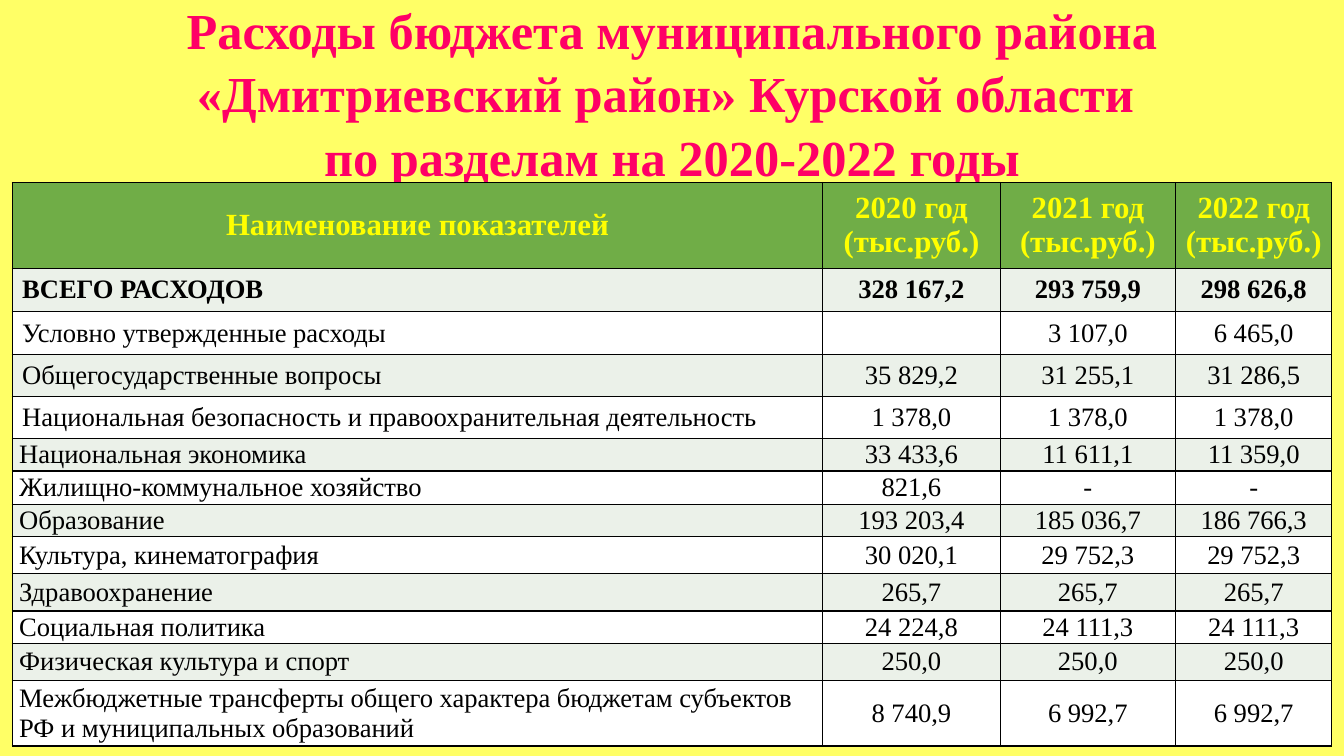
import pptx
import pptx.dml.color
import pptx.enum.text
import pptx.oxml
import pptx.oxml.ns
import pptx.util
from pptx.util import Inches

COLOURS = {
    "page": "FFFF66", "title": "FF0066", "header": "70AD47", "header_text": "FFFF00",
    "band": "EBF1E9", "plain": "FFFFFF", "text": "000000", "border": "000000",
}
FONT = "Times New Roman"
CENTER = pptx.enum.text.PP_ALIGN.CENTER
LEFT = pptx.enum.text.PP_ALIGN.LEFT
MIDDLE = pptx.enum.text.MSO_ANCHOR.MIDDLE

TITLE = ("Расходы бюджета муниципального района «Дмитриевский район» Курской области \n"
         "по разделам на 2020-2022 годы")
COLUMN_WIDTHS = [8.04, 1.76, 1.74, 1.55]
ROW_HEIGHTS = [0.85, 0.43, 0.43, 0.39, 0.36, 0.32, 0.33, 0.32, 0.37, 0.37, 0.32, 0.37, 0.65]
TOTAL_ROW = 1
LAST_ROOMY_ROW = 4  # names down to this row keep the default cell margins
BUDGET = [
    ["Наименование показателей", "2020 год (тыс.руб.)", "2021 год (тыс.руб.)",
     "2022 год (тыс.руб.)"],
    ["ВСЕГО РАСХОДОВ", "328 167,2", "293 759,9", "298 626,8"],
    ["Условно утвержденные расходы", "", "3 107,0", "6 465,0"],
    ["Общегосударственные вопросы", "35 829,2", "31 255,1", "31 286,5"],
    ["Национальная безопасность и правоохранительная деятельность",
     "1 378,0", "1 378,0", "1 378,0"],
    ["Национальная экономика", "33 433,6", "11 611,1", "11 359,0"],
    ["Жилищно-коммунальное хозяйство", "821,6", "-", "-"],
    ["Образование", "193 203,4", "185 036,7", "186 766,3"],
    ["Культура, кинематография", "30 020,1", "29 752,3", "29 752,3"],
    ["Здравоохранение", "265,7", "265,7", "265,7"],
    ["Социальная политика", "24 224,8", "24 111,3", "24 111,3"],
    ["Физическая культура и спорт", "250,0", "250,0", "250,0"],
    ["Межбюджетные трансферты общего характера бюджетам субъектов РФ "
     "и муниципальных образований", "8 740,9", "6 992,7", "6 992,7"],
]


def rgb(name):
    return pptx.dml.color.RGBColor.from_string(COLOURS[name])


def write_text(frame, text, size=19, colour="text", bold=False, align=CENTER, spacing=None):
    """Fill the first paragraph; a newline in the text becomes a line break."""
    para = frame.paragraphs[0]
    para.alignment = align
    para.line_spacing = spacing
    para.font.size = pptx.util.Pt(size)
    for number, line in enumerate(text.split("\n")):
        if number:
            para.add_line_break()
        if line:
            span = para.add_run()
            span.text = line
            span.font.name = FONT
            span.font.size = pptx.util.Pt(size)
            span.font.bold = bold
            span.font.color.rgb = rgb(colour)


def add_title(page):
    box = page.shapes.add_textbox(0, 0, Inches(13.33), Inches(1.81))
    box.text_frame.word_wrap = True
    box.text_frame.vertical_anchor = MIDDLE
    write_text(box.text_frame, TITLE, size=36, colour="title", bold=True, spacing=1.05)


def add_borders(cell):
    properties = cell._tc.get_or_add_tcPr()
    for side in ("lnL", "lnR", "lnT", "lnB"):
        properties.append(pptx.oxml.parse_xml(
            f'<a:{side} {pptx.oxml.ns.nsdecls("a")} w="{pptx.util.Pt(1)}">'
            f'<a:solidFill><a:srgbClr val="{COLOURS["border"]}"/></a:solidFill></a:{side}>'))


def format_cell(cell, text, row, column):
    add_borders(cell)
    cell.vertical_anchor = MIDDLE
    cell.fill.solid()
    if row == 0:
        cell.fill.fore_color.rgb = rgb("header")
        write_text(cell.text_frame, text, size=22, colour="header_text", bold=True)
        return
    cell.fill.fore_color.rgb = rgb("band" if row % 2 else "plain")
    if column > 0 or row > LAST_ROOMY_ROW:
        cell.margin_left = cell.margin_right = Inches(0.07)
        cell.margin_top = cell.margin_bottom = 0
    write_text(cell.text_frame, text, bold=row == TOTAL_ROW,
               align=CENTER if column else LEFT)


def add_budget_table(page):
    table = page.shapes.add_table(
        len(BUDGET), len(COLUMN_WIDTHS), Inches(0.12), Inches(1.81),
        Inches(sum(COLUMN_WIDTHS)), Inches(sum(ROW_HEIGHTS))).table
    for column, width in zip(table.columns, COLUMN_WIDTHS):
        column.width = Inches(width)
    for row, height in zip(table.rows, ROW_HEIGHTS):
        row.height = Inches(height)
    for row, texts in enumerate(BUDGET):
        for column, text in enumerate(texts):
            format_cell(table.cell(row, column), text, row, column)


def main():
    deck = pptx.Presentation()
    deck.slide_width = Inches(13.33)
    deck.slide_height = Inches(7.5)
    page = deck.slides.add_slide(deck.slide_layouts[6])
    page.background.fill.solid()
    page.background.fill.fore_color.rgb = rgb("page")
    add_title(page)
    add_budget_table(page)
    deck.save("out.pptx")


if __name__ == "__main__":
    main()
